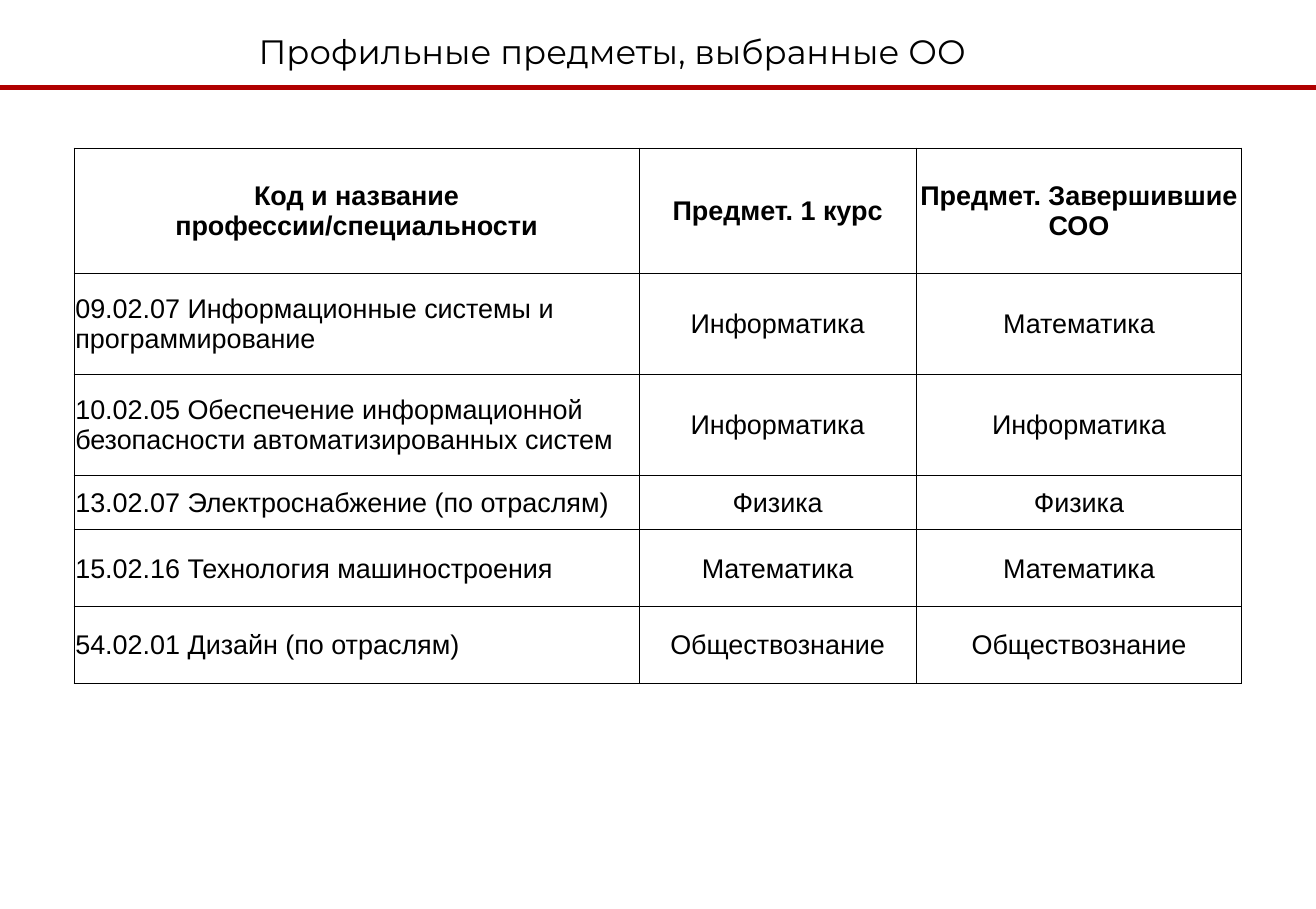
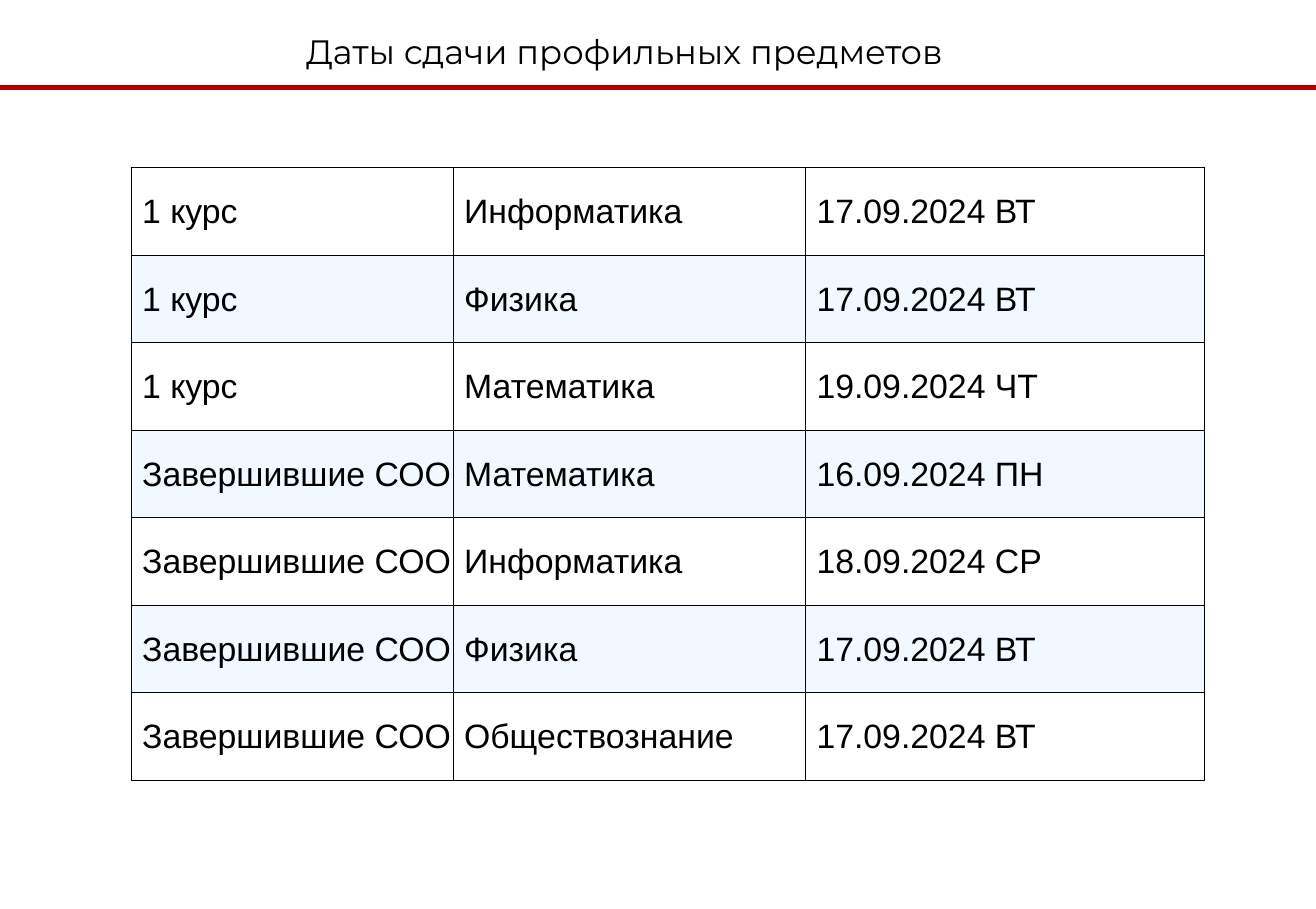
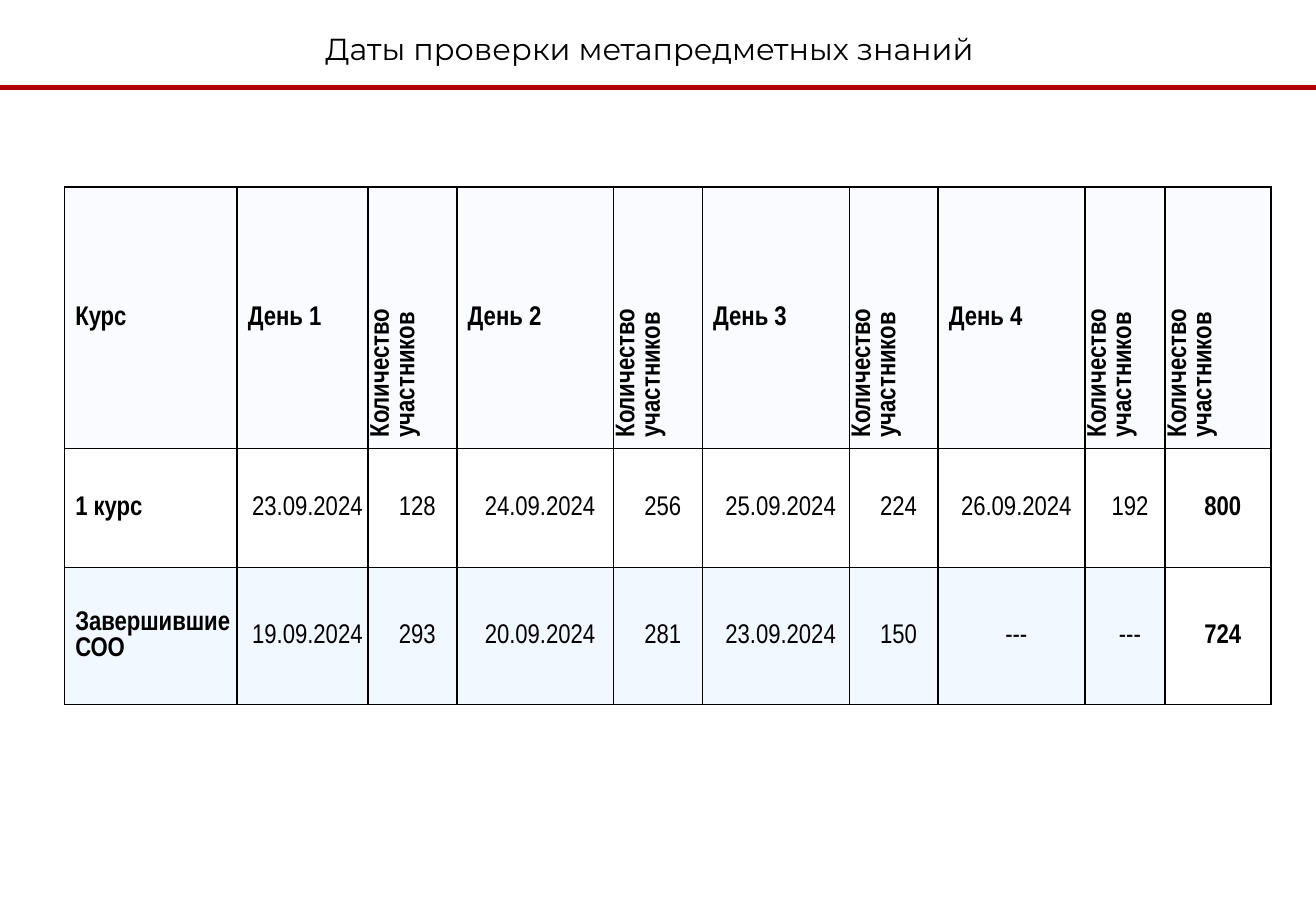
from dataclasses import dataclass
from typing import Optional

from lxml import etree
from pptx import Presentation
from pptx import util as u
from pptx.dml import color
from pptx.enum import shapes, text
from pptx.oxml import ns


@dataclass(frozen=True)
class Theme:
    ink: str = "000000"
    rule: str = "B00000"
    white: str = "FFFFFF"
    band: str = "F2F8FF"
    header: str = "F9FBFE"
    title_font: str = "Montserrat"
    body_font: str = "Arial"
    narrow_font: str = "Arial Narrow"
    large: int = 20
    medium: int = 18
    small: int = 16
    thin: float = 0.5
    thick: float = 1
    rule_width: float = 2.5


THEME = Theme()
WIDTH, HEIGHT = 10.83, 7.48
RULE_TOP = 0.72
TIGHT, PADDED = 0.01, 0.09


@dataclass(frozen=True)
class Title:
    words: str
    left: float
    width: float
    height: float = 0.44
    size: int = THEME.large


@dataclass(frozen=True)
class Cell:
    words: str
    bold: bool = False
    centered: bool = False
    fill: Optional[str] = None
    inset: float = PADDED
    upright: bool = False
    edge: float = THEME.thin  # width of the top and bottom borders


@dataclass(frozen=True)
class Grid:
    left: float
    top: float
    columns: list[float]
    rows: list[float]
    cells: list[list[Cell]]
    font: str = THEME.body_font
    size: int = THEME.small
    border: float = THEME.thin


# Shared drawing functions
def write(frame, words: str, *, font: str, size: int, bold: bool = False,
          centered: bool = False) -> None:
    para = frame.paragraphs[0]
    para.alignment = text.PP_ALIGN.CENTER if centered else text.PP_ALIGN.LEFT
    span = para.add_run()
    span.text = words
    span.font.name = font
    span.font.size = u.Pt(size)
    span.font.bold = bold
    span.font.color.rgb = color.RGBColor.from_string(THEME.ink)


def add_border(properties, side: str, width: float) -> None:
    line = etree.SubElement(properties, ns.qn(f"a:ln{side}"), w=str(u.Pt(width)))
    fill = etree.SubElement(line, ns.qn("a:solidFill"))
    etree.SubElement(fill, ns.qn("a:srgbClr"), val=THEME.ink)


def add_page(deck, title: Title):
    page = deck.slides.add_slide(deck.slide_layouts[6])
    rule = page.shapes.add_connector(
        shapes.MSO_CONNECTOR.STRAIGHT, u.Inches(0), u.Inches(RULE_TOP),
        u.Inches(WIDTH), u.Inches(RULE_TOP))
    rule.line.color.rgb = color.RGBColor.from_string(THEME.rule)
    rule.line.width = u.Pt(THEME.rule_width)
    etree.SubElement(rule._element.spPr, ns.qn("a:effectLst"))

    box = page.shapes.add_textbox(u.Inches(title.left), u.Inches(0.2),
                                  u.Inches(title.width), u.Inches(title.height))
    box.text_frame.word_wrap = False
    box.text_frame.auto_size = text.MSO_AUTO_SIZE.SHAPE_TO_FIT_TEXT
    write(box.text_frame, title.words, font=THEME.title_font, size=title.size)
    return page


def draw_cell(target, cell: Cell, grid: Grid) -> None:
    target.vertical_anchor = text.MSO_ANCHOR.MIDDLE
    target.margin_left = u.Inches(cell.inset)
    target.margin_right = target.margin_top = u.Inches(TIGHT)
    target.margin_bottom = u.Inches(0)
    properties = target._tc.get_or_add_tcPr()
    if cell.upright:
        properties.set("vert", "vert270")
    for side in "LRTB":
        width = max(grid.border, cell.edge) if side in "TB" else grid.border
        add_border(properties, side, width)
    if cell.fill:
        target.fill.solid()
        target.fill.fore_color.rgb = color.RGBColor.from_string(cell.fill)
    else:
        target.fill.background()
    write(target.text_frame, cell.words, font=grid.font, size=grid.size,
          bold=cell.bold, centered=cell.centered)


def draw_grid(page, grid: Grid) -> None:
    table = page.shapes.add_table(
        len(grid.rows), len(grid.columns), u.Inches(grid.left), u.Inches(grid.top),
        u.Inches(sum(grid.columns)), u.Inches(sum(grid.rows))).table
    table.first_row = table.horz_banding = False
    for column, width in zip(table.columns, grid.columns):
        column.width = u.Inches(width)
    for row, height in zip(table.rows, grid.rows):
        row.height = u.Inches(height)
    for row, cells in zip(table.rows, grid.cells):
        for target, cell in zip(row.cells, cells):
            draw_cell(target, cell, grid)


# Profile subjects by specialty
def subjects_grid() -> Grid:
    header = ["Код и название профессии/специальности", "Предмет. 1 курс",
              "Предмет. Завершившие СОО"]
    specialties = [
        ["09.02.07 Информационные системы и программирование",
         "Информатика", "Математика"],
        ["10.02.05 Обеспечение информационной безопасности автоматизированных систем",
         "Информатика", "Информатика"],
        ["13.02.07 Электроснабжение (по отраслям)", "Физика", "Физика"],
        ["15.02.16 Технология машиностроения", "Математика", "Математика"],
        ["54.02.01 Дизайн (по отраслям)", "Обществознание", "Обществознание"],
    ]
    cells = [[Cell(words, bold=True, centered=True, inset=TIGHT, edge=THEME.thick)
              for words in header]]
    cells += [[Cell(words, centered=index > 0, inset=TIGHT)
               for index, words in enumerate(row)] for row in specialties]
    return Grid(0.61, 1.22, [4.65, 2.28, 2.68],
                [1.03, 0.83, 0.83, 0.45, 0.63, 0.63], cells)


# Exam dates by subject
def dates_grid() -> Grid:
    first, finished = "1 курс", "Завершившие СОО"
    exams = [
        [first, "Информатика", "17.09.2024 ВТ"],
        [first, "Физика", "17.09.2024 ВТ"],
        [first, "Математика", "19.09.2024 ЧТ"],
        [finished, "Математика", "16.09.2024 ПН"],
        [finished, "Информатика", "18.09.2024 СР"],
        [finished, "Физика", "17.09.2024 ВТ"],
        [finished, "Обществознание", "17.09.2024 ВТ"],
    ]
    cells = [[Cell(words, fill=THEME.band if index % 2 else THEME.white)
              for words in row] for index, row in enumerate(exams)]
    return Grid(1.08, 1.38, [2.65, 2.9, 3.28], [0.72] * len(exams), cells,
                size=THEME.large)


# Days and numbers of participants
def participants_grid() -> Grid:
    count = "Количество участников"
    header = ["Курс"]
    for day in range(1, 5):
        header += [f"День {day}", count]
    header.append(count)
    courses = [
        ["1 курс", "23.09.2024", "128", "24.09.2024", "256", "25.09.2024", "224",
         "26.09.2024", "192", "800"],
        ["Завершившие СОО", "19.09.2024", "293", "20.09.2024", "281", "23.09.2024",
         "150", "---", "---", "724"],
    ]
    last = len(header) - 1
    cells = [[Cell(words, bold=True, fill=THEME.header, upright=words == count)
              for words in header]]
    for row, fill in zip(courses, (THEME.white, THEME.band)):
        cells.append([Cell(words, bold=index in (0, last), centered=index > 0,
                           fill=THEME.white if index == last else fill)
                      for index, words in enumerate(row)])
    return Grid(0.53, 1.54,
                [1.42, 1.08, 0.73, 1.29, 0.73, 1.21, 0.73, 1.21, 0.66, 0.87],
                [1.46, 0.98, 1.13], cells, font=THEME.narrow_font,
                border=THEME.thick)


def main() -> None:
    deck = Presentation()
    deck.slide_width, deck.slide_height = u.Inches(WIDTH), u.Inches(HEIGHT)
    pages = [
        (Title("Профильные предметы, выбранные ОО", 2.03, 6.55), subjects_grid()),
        (Title("Даты сдачи профильных предметов", 2.42, 5.98), dates_grid()),
        (Title("Даты проверки метапредметных знаний", 2.58, 6.03, 0.4,
               THEME.medium), participants_grid()),
    ]
    for title, grid in pages:
        draw_grid(add_page(deck, title), grid)
    deck.save("out.pptx")


if __name__ == "__main__":
    main()
